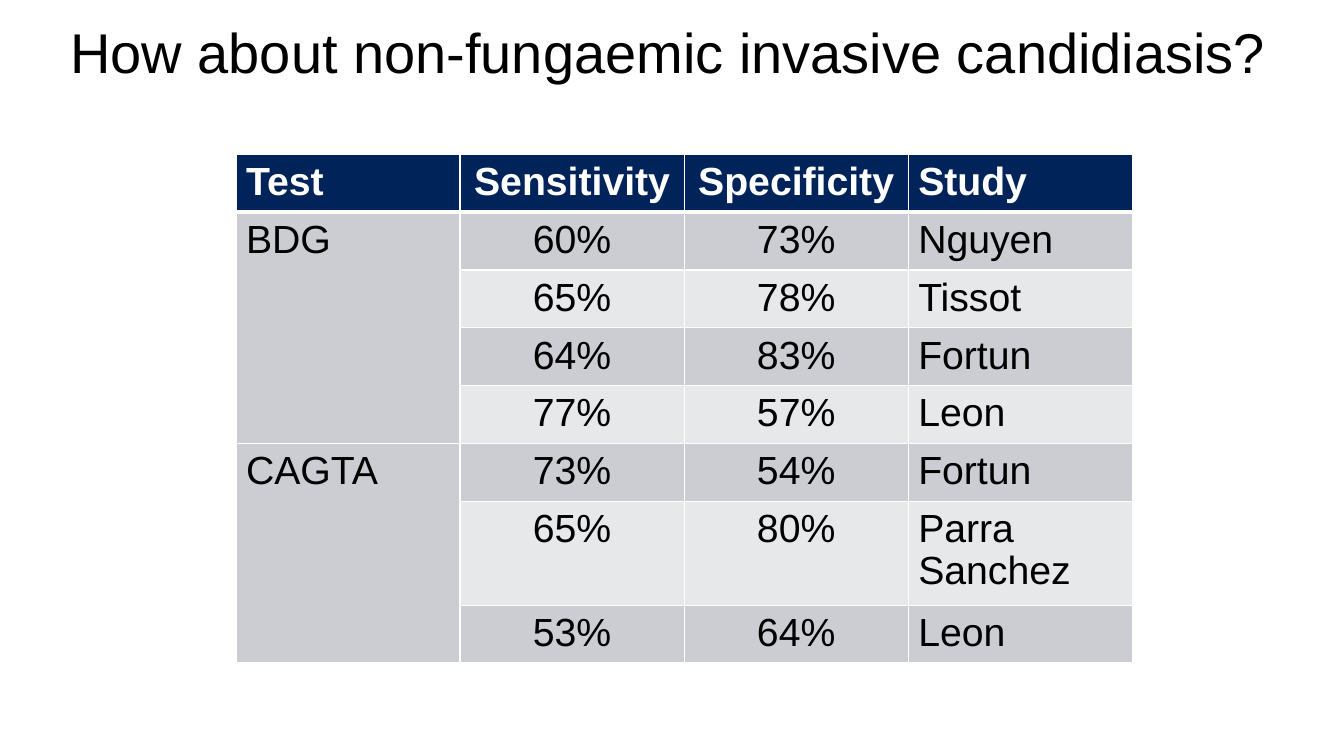
"""Builds a slide with a table of test accuracy in non-fungaemic invasive candidiasis."""
from dataclasses import dataclass

from lxml.etree import SubElement
from pptx import Presentation
from pptx.dml.color import RGBColor as Color
from pptx.enum.text import MSO_ANCHOR as Anchor, PP_ALIGN as Align
from pptx.oxml.ns import qn
from pptx.util import Inches, Pt

TITLE = "How about non-fungaemic invasive candidiasis?"
HEADER = ("Test", "Sensitivity", "Specificity", "Study")
RESULTS = {
    "BDG": [
        ("60%", "73%", "Nguyen"),
        ("65%", "78%", "Tissot"),
        ("64%", "83%", "Fortun"),
        ("77%", "57%", "Leon"),
    ],
    "CAGTA": [
        ("73%", "54%", "Fortun"),
        ("65%", "80%", "Parra Sanchez"),
        ("53%", "64%", "Leon"),
    ],
}
CENTRED_COLUMNS = (1, 2)
TWO_LINE_STUDY = "Parra Sanchez"


@dataclass(frozen=True)
class Theme:
    """Holds the colours and type sizes."""
    font: str = "Arial"
    title_size: int = 40
    table_size: int = 28
    ink: str = "000000"
    white: str = "FFFFFF"
    header: str = "00235A"
    bands: tuple = ("CCCDD2", "E7E8EA")
    rule: int = 1
    header_rule: int = 3


THEME = Theme()


def style_text(para, size, color, align, bold=False):
    """Format a paragraph and its runs."""
    para.alignment = align
    for span in para.runs:
        font = span.font
        font.name, font.size, font.bold = THEME.font, Pt(size), bold
        font.color.rgb = Color.from_string(color)


def add_borders(cell, row):
    """Draw white rules around a cell, heavier below the header."""
    heavy_side = {0: "lnB", 1: "lnT"}.get(row)
    properties = cell._tc.get_or_add_tcPr()
    for side in ("lnL", "lnR", "lnT", "lnB"):
        width = THEME.header_rule if side == heavy_side else THEME.rule
        line = SubElement(properties, qn(f"a:{side}"), w=str(Pt(width)))
        fill = SubElement(line, qn("a:solidFill"))
        SubElement(fill, qn("a:srgbClr"), val=THEME.white)


def fill_cell(cell, text, row, column):
    """Write and format one table cell."""
    is_header = row == 0
    band = THEME.bands[0 if column == 0 else (row - 1) % 2]
    add_borders(cell, row)
    cell.fill.solid()
    cell.fill.fore_color.rgb = Color.from_string(THEME.header if is_header else band)
    cell.margin_top = Inches(0.08)
    cell.text_frame.text = text
    para = cell.text_frame.paragraphs[0]
    para.line_spacing = 0.95
    align = Align.CENTER if column in CENTRED_COLUMNS else Align.LEFT
    style_text(para, THEME.table_size, THEME.white if is_header else THEME.ink, align, is_header)


def add_title(page):
    """Add the centred title."""
    box = page.shapes.add_textbox(Inches(0.24), Inches(0.12), Inches(12.76), Inches(0.77))
    frame = box.text_frame
    frame.word_wrap = True
    frame.vertical_anchor = Anchor.BOTTOM
    frame.text = TITLE
    style_text(frame.paragraphs[0], THEME.title_size, THEME.ink, Align.CENTER)


def add_results(page):
    """Add the results table, with one merged cell for each test."""
    rows = [HEADER]
    groups = []
    for test, studies in RESULTS.items():
        groups.append((len(rows), len(rows) + len(studies) - 1))
        rows += [(test if i == 0 else "", *study) for i, study in enumerate(studies)]
    heights = [Inches(1.03 if row[-1] == TWO_LINE_STUDY else 0.57) for row in rows]
    table = page.shapes.add_table(
        len(rows), len(HEADER), Inches(2.34), Inches(1.53), Inches(8.89), sum(heights)
    ).table
    for r, (values, height) in enumerate(zip(rows, heights)):
        table.rows[r].height = height
        for c, value in enumerate(values):
            fill_cell(table.cell(r, c), value, r, c)
    for first, last in groups:
        table.cell(first, 0).merge(table.cell(last, 0))


def main():
    """Build and save the deck."""
    deck = Presentation()
    deck.slide_width, deck.slide_height = Inches(13.33), Inches(7.5)
    page = deck.slides.add_slide(deck.slide_layouts[6])
    add_title(page)
    add_results(page)
    deck.save("out.pptx")


if __name__ == "__main__":
    main()
